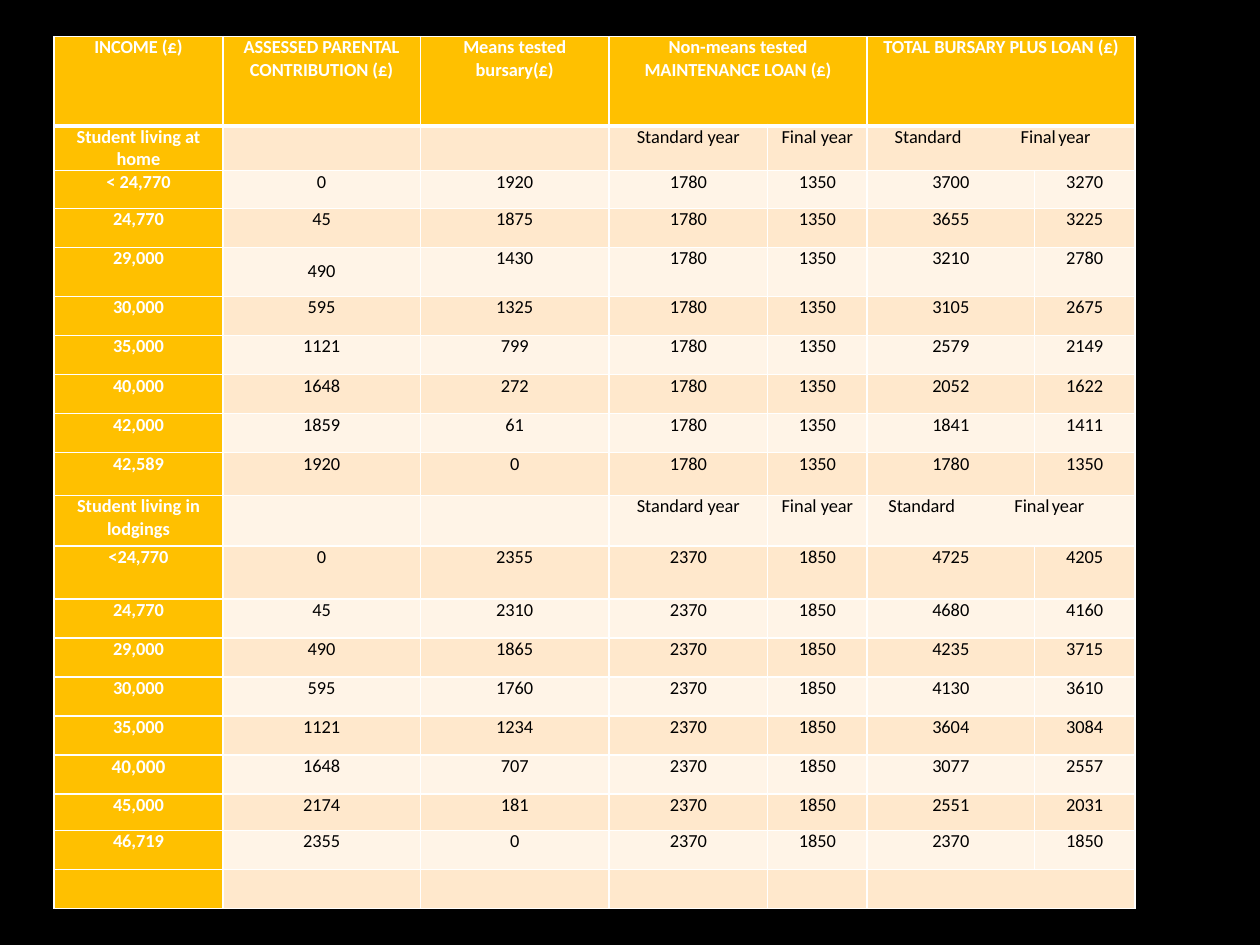
from dataclasses import dataclass

from lxml import etree
from pptx import Presentation
from pptx import util as u
from pptx.dml.color import RGBColor
from pptx.enum import text
from pptx.oxml import ns


@dataclass(frozen=True)
class Theme:
    font: str = "Calibri"
    size: float = 10.5
    large: float = 11
    gap: float = 6
    page: str = "000000"
    accent: str = "FFC000"
    band_dark: str = "FFE8CC"
    band_light: str = "FFF4E7"
    light_text: str = "FFFFFF"
    dark_text: str = "000000"
    border: str = "FFFFFF"
    thin: float = 1
    thick: float = 3


THEME = Theme()
SLIDE_WIDTH, SLIDE_HEIGHT = 10, 7.5
TABLE_BOX = (0.43, 0.29, 8.58, 6.91)
COLUMNS = [1.34, 1.57, 1.5, 1.26, 0.79, 1.33, 0.8]
ROWS = [0.71, 0.34, 0.3, 0.31, 0.39] + [0.31] * 4 + [0.34, 0.4, 0.42] + [0.31] * 5 + [0.29, 0.31, 0.31]

# Cells that start a span of two columns: row -> columns
SPANS = {0: (3, 5), 1: (5,), 10: (5,), 19: (5,)}

HEADER = ["INCOME (£)", "ASSESSED PARENTAL CONTRIBUTION (£)", "Means tested bursary(£)",
          "Non-means tested MAINTENANCE LOAN (£)", "", "TOTAL BURSARY PLUS LOAN (£)", ""]

# Per living arrangement: title, (standard, final) loan, indent and tab stop, income -> bursary
SECTIONS = [
    ("Student living at home", (1780, 1350), (0.18, 1.3),
     {"< 24,770": 1920, "24,770": 1875, "29,000": 1430, "30,000": 1325,
      "35,000": 799, "40,000": 272, "42,000": 61, "42,589": 0}),
    ("Student living in lodgings", (2370, 1850), (0.13, 1.36),
     {"<24,770": 2355, "24,770": 2310, "29,000": 1865, "30,000": 1760, "35,000": 1234,
      "40,000": 707, "45,000": 181, "46,719": 0}),
]


def section_rows(title, loans, bursaries):
    """Contribution is the bursary lost; each total is bursary plus loan."""
    full_bursary = max(bursaries.values())
    yield [title, "", "", "Standard year", "Final year", "", ""]
    for income, bursary in bursaries.items():
        totals = [bursary + loan for loan in loans]
        yield [income, full_bursary - bursary, bursary, *loans, *totals]


def add_run(paragraph, wording, color, size=THEME.size, bold=False):
    run = paragraph.add_run()
    run.text = wording
    style = {"name": THEME.font, "size": u.Pt(size), "bold": bold}
    for name, value in style.items():
        setattr(run.font, name, value)
    run.font.color.rgb = RGBColor.from_string(color)


def set_borders(cell, widths):
    """Draw the four sides; border elements come before the cell fill."""
    properties = cell._tc.get_or_add_tcPr()
    for position, (side, width) in enumerate(widths.items()):
        line = etree.Element(ns.qn(f"a:ln{side}"), w=str(u.Pt(width)))
        fill = etree.SubElement(line, ns.qn("a:solidFill"))
        etree.SubElement(fill, ns.qn("a:srgbClr"), val=THEME.border)
        properties.insert(position, line)


def format_cell(cell, row, column):
    margins = {"margin_left": 0.04, "margin_right": 0.04, "margin_top": 0, "margin_bottom": 0}
    for name, value in margins.items():
        setattr(cell, name, u.Inches(value))
    band = THEME.band_dark if row % 2 else THEME.band_light
    cell.fill.solid()
    cell.fill.fore_color.rgb = RGBColor.from_string(
        THEME.accent if row == 0 or column == 0 else band)
    set_borders(cell, {"L": THEME.thin, "R": THEME.thin,
                       "T": THEME.thick if row == 1 else THEME.thin,
                       "B": THEME.thick if row == 0 else THEME.thin})


def write_year_pair(cell, indent, stop):
    """Two sub-headings in one merged cell, set apart by a tab stop."""
    paragraph = cell.text_frame.paragraphs[0]
    paragraph.alignment = text.PP_ALIGN.LEFT
    properties = paragraph._p.get_or_add_pPr()
    properties.set("marL", str(u.Inches(indent)))
    properties.set("indent", "0")
    tabs = etree.SubElement(properties, ns.qn("a:tabLst"))
    etree.SubElement(tabs, ns.qn("a:tab"), pos=str(u.Inches(stop)), algn="l")
    add_run(paragraph, "Standard\tFinal", THEME.dark_text)
    add_run(paragraph, " ", THEME.dark_text, THEME.gap)
    add_run(paragraph, "year", THEME.dark_text)


def add_bursary_table(slide, box):
    rows, section_starts = [HEADER], {}
    for title, loans, stops, bursaries in SECTIONS:
        section_starts[len(rows)] = stops
        rows.extend(section_rows(title, loans, bursaries))
    rows.append([""] * len(COLUMNS))

    left, top, width, height = box
    frame = slide.shapes.add_table(len(rows), len(COLUMNS), *map(u.Inches, box))
    table = frame.table
    table.horz_banding = False

    # Grid, scaled to the box
    for column, share in zip(table.columns, COLUMNS):
        column.width = u.Inches(width * share / sum(COLUMNS))
    for row, share in zip(table.rows, ROWS):
        row.height = u.Inches(height * share / sum(ROWS))

    # Fills, borders and wording
    for r, values in enumerate(rows):
        for c, value in enumerate(values):
            cell = table.cell(r, c)
            format_cell(cell, r, c)
            if value == "":
                continue
            heading = r == 0 or c == 0
            paragraph = cell.text_frame.paragraphs[0]
            paragraph.alignment = text.PP_ALIGN.CENTER
            add_run(paragraph, str(value), THEME.light_text if heading else THEME.dark_text,
                    THEME.large if (r, c) == (16, 0) else THEME.size, heading)

    # Merged cells and their sub-headings
    for r, starts in SPANS.items():
        for c in starts:
            table.cell(r, c).merge(table.cell(r, c + 1))
    for r, stops in section_starts.items():
        write_year_pair(table.cell(r, 5), *stops)

    # One contribution sits lower in its cell
    table.cell(4, 1).margin_top = u.Inches(0.1)


def main():
    presentation = Presentation()
    presentation.slide_width = u.Inches(SLIDE_WIDTH)
    presentation.slide_height = u.Inches(SLIDE_HEIGHT)
    slide = presentation.slides.add_slide(presentation.slide_layouts[6])
    background = slide.background.fill
    background.solid()
    background.fore_color.rgb = RGBColor.from_string(THEME.page)
    add_bursary_table(slide, TABLE_BOX)
    presentation.save("out.pptx")


if __name__ == "__main__":
    main()
